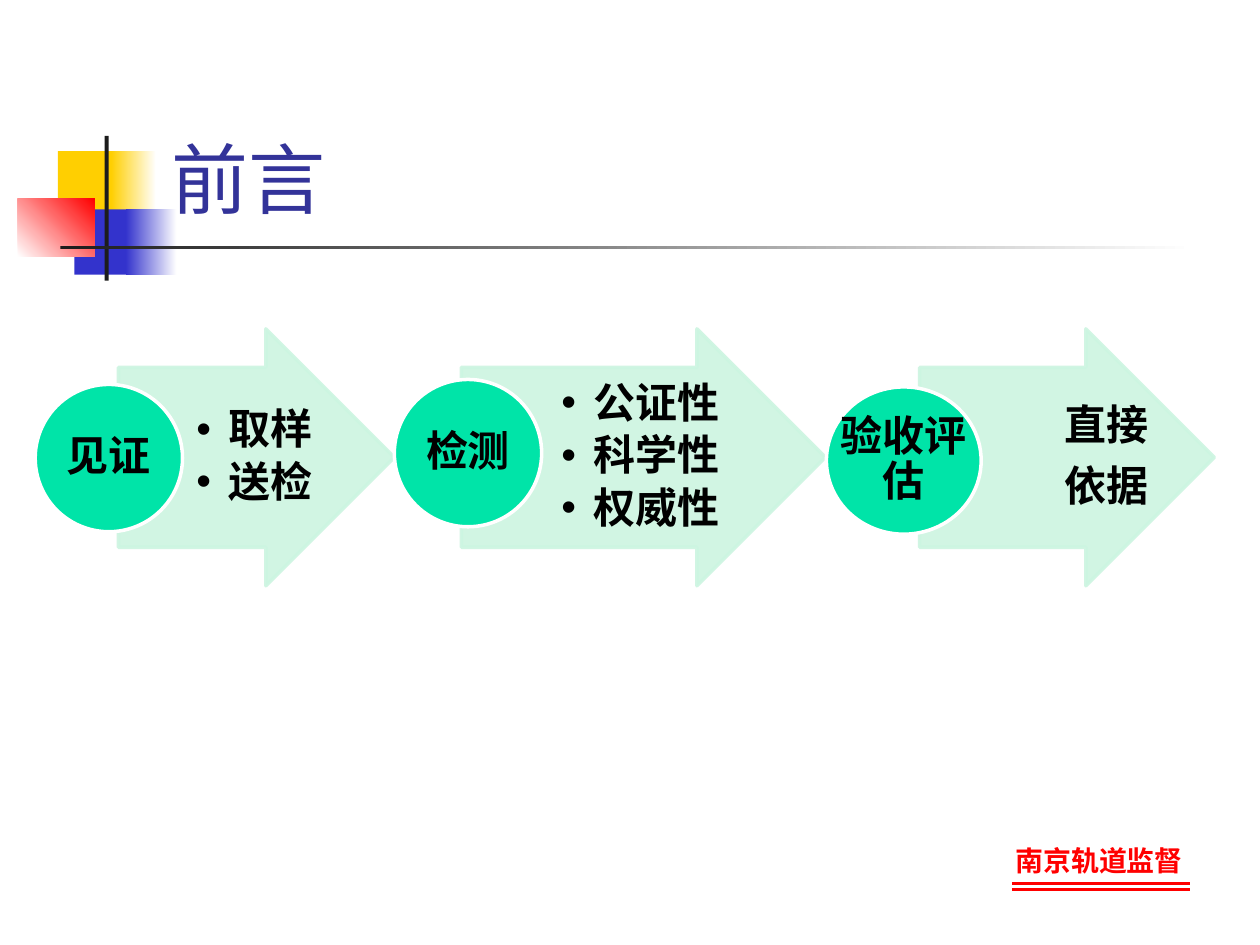
from lxml.etree import SubElement
from pptx import Presentation
from pptx.dml.color import RGBColor
from pptx.enum.shapes import MSO_CONNECTOR as Connector, MSO_SHAPE as Shape
from pptx.enum.text import MSO_ANCHOR as Anchor, PP_ALIGN as Align
from pptx.oxml.ns import qn
from pptx.util import Cm, Pt


def colour(value):
    return RGBColor.from_string(value)


def write(para, text, size=24, ink="000000", bold=True, font="Roboto",
          align=Align.LEFT, spacing=None, after=None, bullet=None):
    para.alignment = align
    if spacing:
        para.line_spacing = spacing
    if after:
        para.space_after = Pt(after)
    if bullet:
        props = para._p.get_or_add_pPr()
        props.set("marL", str(Cm(0.64)))
        props.set("indent", str(-Cm(0.64)))
        SubElement(props, qn("a:buFont"), typeface="Arial")
        SubElement(props, qn("a:buChar"), char=bullet)
    span = para.add_run()
    span.text = text
    span.font.size = Pt(size)
    span.font.bold = bold
    span.font.color.rgb = colour(ink)
    span.font.name = font
    SubElement(span._r.get_or_add_rPr(), qn("a:ea"), typeface=font)


class SlideBuilder:
    mint = "CCF5E1"
    green = "00E4A8"
    white = "FFFFFF"
    red = "FF0000"
    arrow_top, arrow_height = 6.63, 5.18
    circle_height = 2.97
    arrow_insets = (0.18, 0.05, 0.08, 0.05)
    circle_insets = (0.05, 0.05, 0.05, 0.05)

    def __init__(self, page):
        self.page = page

    def shape(self, kind, frame, fill, line=None):
        shape = self.page.shapes.add_shape(kind, *map(Cm, frame))
        shape.shadow.inherit = False
        shape.fill.solid()
        shape.fill.fore_color.rgb = colour(fill)
        if line:
            shape.line.color.rgb = colour(line)
            shape.line.width = Pt(2)
        else:
            shape.line.fill.background()
        return shape

    def gradient(self, frame, start, end, angle=0):
        shape = self.shape(Shape.RECTANGLE, frame, start)
        shape.fill.gradient()
        shape.fill.gradient_angle = angle
        for stop, value, position in zip(shape.fill.gradient_stops, (start, end), (0, 1)):
            stop.color.rgb = colour(value)
            stop.position = position

    def text(self, frame, lines, anchor=Anchor.MIDDLE,
             insets=(0.25, 0.13, 0.25, 0.13), **style):
        box = self.page.shapes.add_textbox(*map(Cm, frame)).text_frame
        box.word_wrap = True
        box.vertical_anchor = anchor
        box.margin_left, box.margin_top, box.margin_right, box.margin_bottom = map(Cm, insets)
        for index, line in enumerate(lines):
            para = box.add_paragraph() if index else box.paragraphs[0]
            write(para, line, **style)

    def rule(self, left, right, top):
        line = self.page.shapes.add_connector(
            Connector.STRAIGHT, Cm(left), Cm(top), Cm(right), Cm(top))
        line.line.color.rgb = colour(self.red)
        line.line.width = Pt(1.5)
        SubElement(line._element.spPr, qn("a:effectLst"))

    def arrow(self, left, width, lines, **style):
        frame = (left, self.arrow_top, width, self.arrow_height)
        arrow = self.shape(Shape.RIGHT_ARROW, frame, self.mint, self.mint)
        arrow.adjustments[0] = 0.7
        arrow.adjustments[1] = 0.5
        for tint in arrow._element.spPr.iter(qn("a:srgbClr")):
            SubElement(tint, qn("a:alpha"), val="90000")
        inner = (left + width / 4, self.arrow_top, width * 3 / 4, self.arrow_height)
        self.text(inner, lines, insets=self.arrow_insets, spacing=0.9, **style)

    def circle(self, left, top, width, label):
        frame = (left, top, width, self.circle_height)
        self.shape(Shape.OVAL, frame, self.green, self.white)
        self.text(frame, [label], insets=self.circle_insets,
                  align=Align.CENTER, spacing=0.9, after=8.5)


def main():
    deck = Presentation()
    deck.slide_width, deck.slide_height = Cm(25.4), Cm(19.05)
    builder = SlideBuilder(deck.slides.add_slide(deck.slide_layouts[6]))

    yellow, blue, black = "FFCF01", "3333CC", "1C1C1C"
    builder.shape(Shape.RECTANGLE, (1.17, 3.05, 1.22, 1.32), yellow)
    builder.gradient((2.24, 3.05, 0.91, 1.32), yellow, builder.white)
    builder.shape(Shape.RECTANGLE, (1.5, 4.22, 1.17, 1.32), blue)
    builder.gradient((2.54, 4.22, 1.02, 1.32), blue, builder.white)
    builder.gradient((0.36, 4.01, 1.55, 1.17), builder.white, builder.red, angle=45)
    builder.shape(Shape.RECTANGLE, (2.11, 2.74, 0.08, 2.92), black)
    builder.gradient((1.22, 4.95, 22.86, 0.08), black, builder.white)

    builder.text((3.2, 0.58, 21.64, 4.06), ["前言"], anchor=Anchor.BOTTOM,
                 size=44, ink="333399", bold=False)

    bulleted = dict(bullet="•", after=4)
    centred = dict(align=Align.CENTER, after=8.5)
    steps = [
        ((2.39, 5.56), ["取样", "送检"], bulleted, (0.71, 7.75, 2.97), "见证"),
        ((9.3, 7.34), ["公证性", "科学性", "权威性"], bulleted, (7.95, 7.65, 2.97), "检测"),
        ((18.54, 5.94), ["直接", "依据"], centred, (16.66, 7.8, 3.12), "验收评估"),
    ]
    for arrow, lines, style, circle, label in steps:
        builder.arrow(*arrow, lines, **style)
        builder.circle(*circle, label)

    builder.text((20.22, 16.87, 4.45, 0.94), ["南京轨道监督"],
                 anchor=Anchor.TOP, size=16, ink=builder.red)
    for top in (17.81, 17.93):
        builder.rule(20.4, 23.98, top)

    deck.save("out.pptx")


if __name__ == "__main__":
    main()
